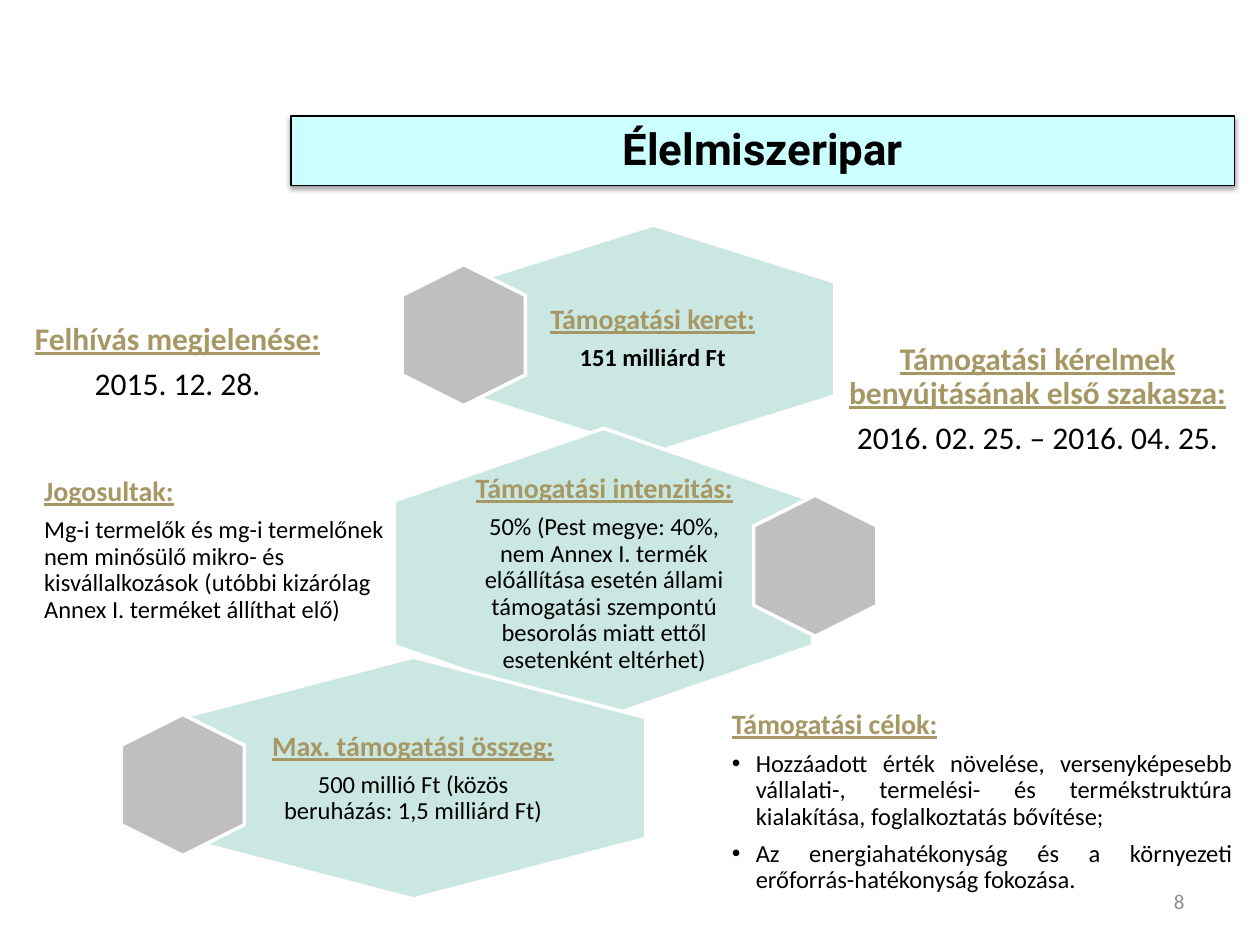
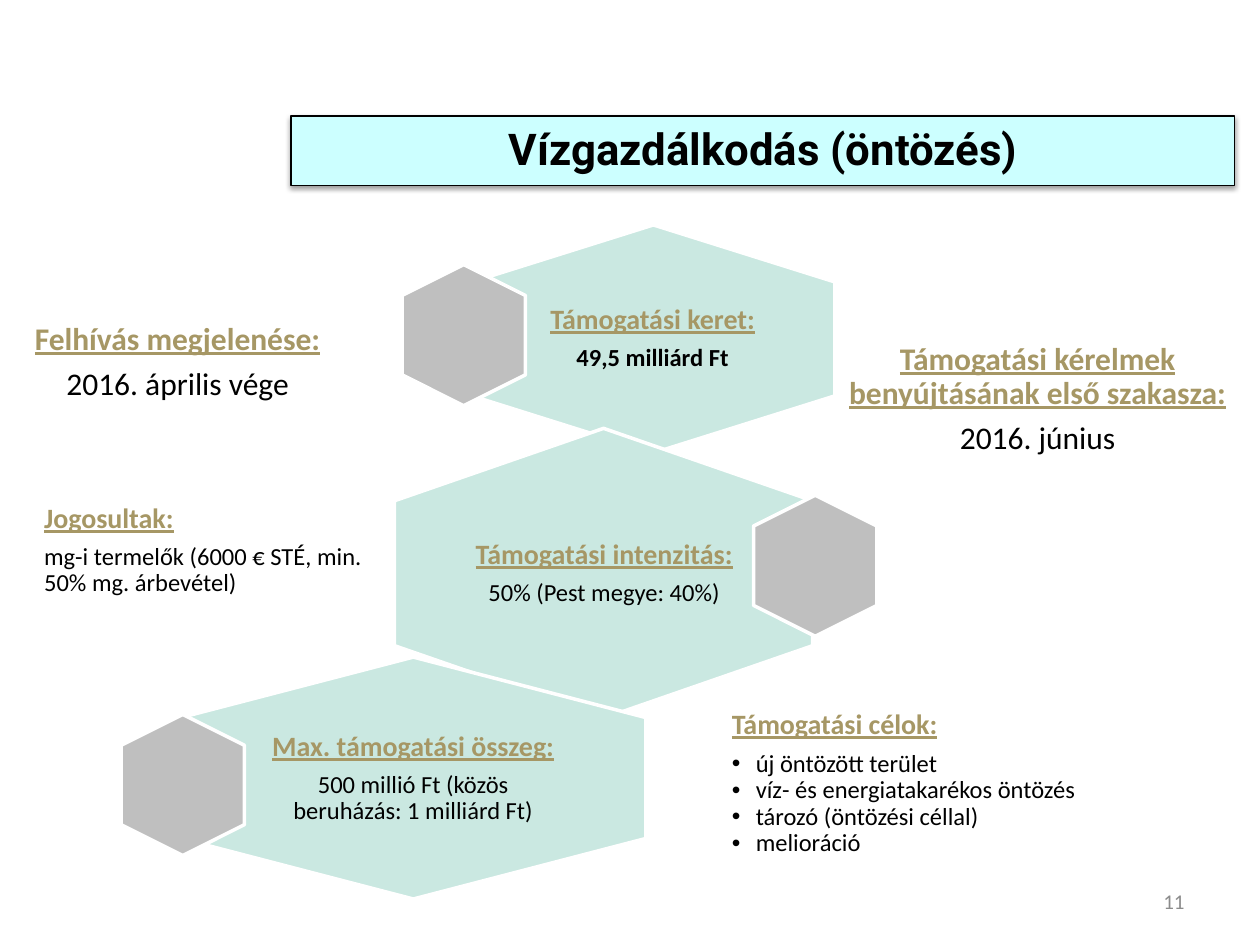
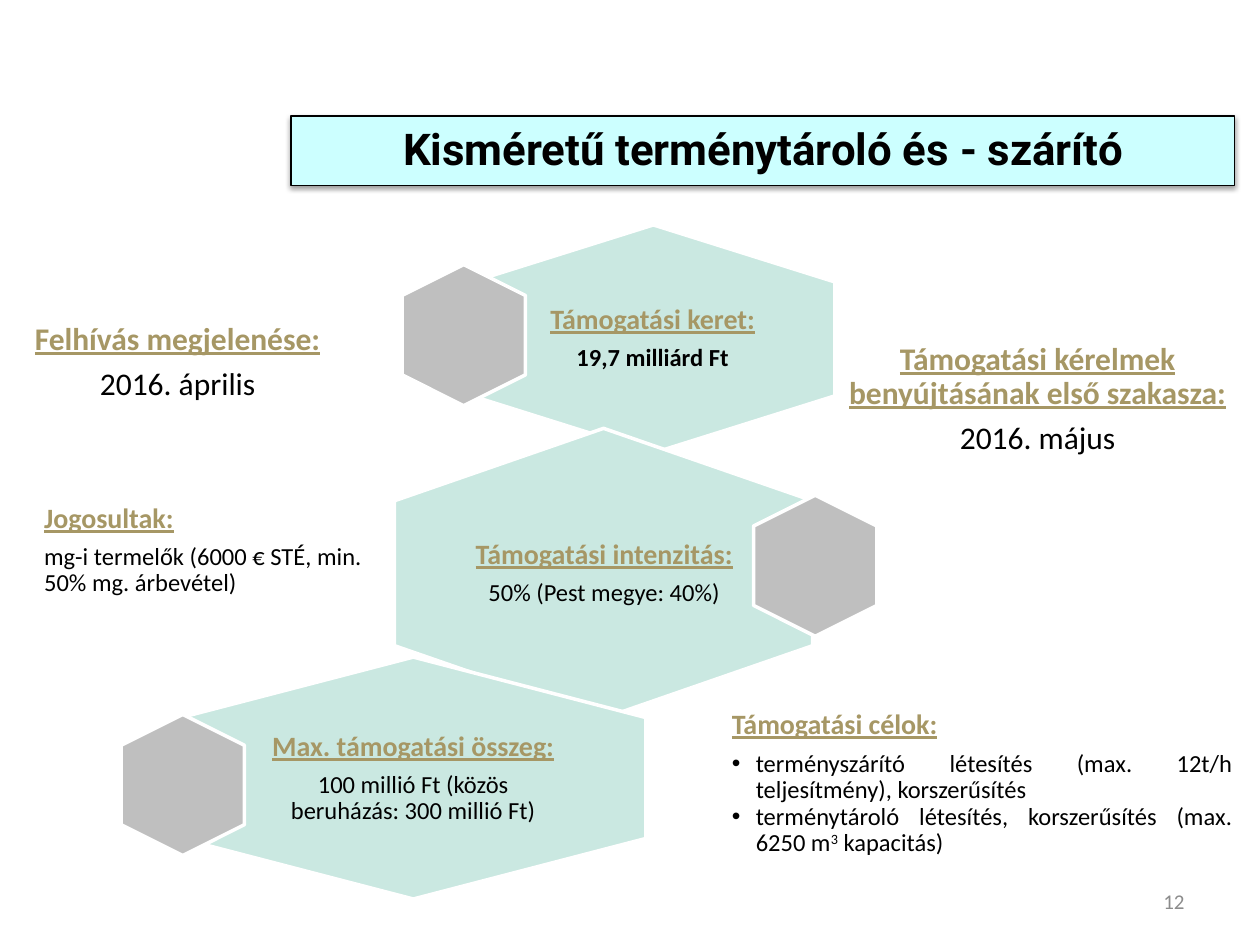
from lxml import etree
from pptx import Presentation
from pptx.dml.color import RGBColor
from pptx.enum.shapes import MSO_SHAPE
from pptx.enum.text import MSO_ANCHOR, PP_ALIGN
from pptx.oxml.ns import qn
from pptx.util import Inches, Pt

LEFT, CENTER, RIGHT, JUSTIFY = PP_ALIGN.LEFT, PP_ALIGN.CENTER, PP_ALIGN.RIGHT, PP_ALIGN.JUSTIFY
TOP, MIDDLE = MSO_ANCHOR.TOP, MSO_ANCHOR.MIDDLE
HEXAGON, RECTANGLE = MSO_SHAPE.HEXAGON, MSO_SHAPE.RECTANGLE

BODY_FONT, TITLE_FONT = "Calibri", "Roboto"
BLACK, WHITE, GOLD = "000000", "FFFFFF", "A69765"
MINT, GREY, CYAN, NUMBER_GREY = "CAE8E1", "BFBFBF", "CCFFFF", "8C8C8C"

# Content: one entry per call for applications
SMALL_FARMERS = "mg-i termelők (6000 € STÉ, min. 50% mg. árbevétel)"
CALLS = [
    {
        "number": "8",
        "title": "Élelmiszeripar",
        "budget": "151 milliárd Ft",
        "deadline": "2016. 02. 25. – 2016. 04. 25.",
        "intensity": "50% (Pest megye: 40%, nem Annex I. termék előállítása esetén állami "
                     "támogatási szempontú besorolás miatt ettől esetenként eltérhet)",
        "eligible": "Mg-i termelők és mg-i termelőnek nem minősülő mikro- és kisvállalkozások "
                    "(utóbbi kizárólag Annex I. terméket állíthat elő)",
        "maximum": "500 millió Ft (közös beruházás: 1,5 milliárd Ft)",
        "published": "2015. 12. 28.",
        "goals": [
            ["Hozzáadott érték növelése, versenyképesebb vállalati-, termelési- és "
             "termékstruktúra kialakítása, foglalkoztatás bővítése;"],
            ["Az energiahatékonyság és a környezeti erőforrás-hatékonyság fokozása."],
        ],
        "goal_gap": 6,
        "goals_height": 1.57,
    },
    {
        "number": "11",
        "title": "Vízgazdálkodás (öntözés)",
        "budget": "49,5 milliárd Ft",
        "deadline": "2016. június",
        "intensity": "50% (Pest megye: 40%)",
        "eligible": SMALL_FARMERS,
        "maximum": "500 millió Ft (közös beruházás: 1 milliárd Ft)",
        "published": "2016. április vége",
        "goals": [
            ["új öntözött terület"],
            ["víz- és energiatakarékos öntözés"],
            ["tározó (öntözési céllal)"],
            ["melioráció"],
        ],
        "goal_gap": 0,
        "goals_height": 1.28,
    },
    {
        "number": "12",
        "title": "Kisméretű terménytároló és - szárító",
        "budget": "19,7 milliárd Ft",
        "deadline": "2016. május",
        "intensity": "50% (Pest megye: 40%)",
        "eligible": SMALL_FARMERS,
        "maximum": "100 millió Ft (közös beruházás: 300 millió Ft)",
        "published": "2016. április",
        "goals": [
            ["terményszárító létesítés (max. 12t/h teljesítmény), korszerűsítés"],
            # The second run of a goal is superscript
            ["terménytároló létesítés, korszerűsítés (max. 6250 m", "3", " kapacitás)"],
        ],
        "goal_gap": 0,
        "goals_height": 1.28,
    },
]

# Label boxes: heading, box, heading size, text size, alignment
LABELS = {
    "budget": ("Támogatási keret:", (4.22, 2.09, 1.92, 1.2), 16, 14, CENTER),
    "deadline": ("Támogatási kérelmek benyújtásának első szakasza:",
                 (6.64, 2.67, 3.19, 1), 18, 18, CENTER),
    "intensity": ("Támogatási intenzitás:", (3.69, 3.79, 2.21, 1.53), 16, 14, CENTER),
    "eligible": ("Jogosultak:", (0.28, 3.52, 2.91, 1.7), 16, 14, LEFT),
    "maximum": ("Max. támogatási összeg:", (2.05, 5.54, 2.46, 1.28), 16, 14, CENTER),
    "published": ("Felhívás megjelenése:", (0.2, 2.41, 2.42, 0.94), 18, 18, CENTER),
}

# Rows from top to bottom: large hexagon, small hexagon corner, labels over the row
SMALL_SIZE = (1.12, 0.98)
ROWS = [
    ((4.28, 1.25, 1.81, 2.88), (3.12, 2.17), ("budget", "deadline")),
    ((3.64, 2.89, 2.3, 3.32), (5.91, 4), ("intensity", "eligible")),
    ((2.32, 4.33, 1.92, 3.69), (0.89, 5.74), ("maximum", "published")),
]
TITLE_BOX = (2.31, 0.92, 7.49, 0.55)
NUMBER_BOX = (7.17, 6.95, 2.33, 0.4)


def color(value):
    return RGBColor.from_string(value)


def add_box(slide, box, anchor=TOP, inset=None):
    frame = slide.shapes.add_textbox(*map(Inches, box)).text_frame
    frame.word_wrap = True
    frame.vertical_anchor = anchor
    if inset is not None:
        frame.margin_left = frame.margin_right = Inches(inset)
        frame.margin_top = frame.margin_bottom = Inches(inset)
    return frame


def add_run(paragraph, text, size, ink=BLACK, bold=False, underline=False, font=BODY_FONT):
    run = paragraph.add_run()
    run.text = text
    run.font.name = font
    run.font.size = Pt(size)
    run.font.color.rgb = color(ink)
    run.font.bold = bold
    run.font.underline = underline
    return run


def add_heading(paragraph, text, size):
    add_run(paragraph, text, size, GOLD, bold=True, underline=True)


def set_spacing(paragraph, alignment, after):
    paragraph.alignment = alignment
    paragraph.line_spacing = 0.9
    paragraph.space_after = Pt(after)


def add_bullet(paragraph):
    properties = paragraph._p.get_or_add_pPr()
    properties.set("marL", str(Inches(0.19)))
    properties.set("indent", str(-Inches(0.19)))
    etree.SubElement(properties, qn("a:buFont"), typeface="Arial")
    etree.SubElement(properties, qn("a:buChar"), char="•")


def add_shadow(shape):
    effects = shape._element.spPr.find(qn("a:effectLst"))
    shadow = etree.SubElement(effects, qn("a:outerShdw"), blurRad=str(Pt(3.1)),
                              dist=str(Pt(1.6)), dir="5400000", rotWithShape="0")
    ink = etree.SubElement(shadow, qn("a:srgbClr"), val=BLACK)
    etree.SubElement(ink, qn("a:alpha"), val="38000")


def add_filled(slide, kind, box, fill, line, width):
    shape = slide.shapes.add_shape(kind, *map(Inches, box))
    shape.shadow.inherit = False
    shape.fill.solid()
    shape.fill.fore_color.rgb = color(fill)
    shape.line.color.rgb = color(line)
    shape.line.width = Pt(width)
    return shape


def add_hexagon(slide, box, fill):
    hexagon = add_filled(slide, HEXAGON, box, fill, WHITE, 2)
    hexagon.rotation = 90


def add_label(slide, name, text):
    heading, box, heading_size, text_size, alignment = LABELS[name]
    frame = add_box(slide, box, MIDDLE, 0.07)
    first = frame.paragraphs[0]
    set_spacing(first, alignment, 0.35 * heading_size)
    add_heading(first, heading, heading_size)
    second = frame.add_paragraph()
    set_spacing(second, alignment, 0.35 * text_size)
    add_run(second, text, text_size, bold=name == "budget")


def add_goals(slide, call):
    frame = add_box(slide, (5.71, 5.59, 4.17, call["goals_height"]))
    heading = frame.paragraphs[0]
    set_spacing(heading, JUSTIFY, 6)
    add_heading(heading, "Támogatási célok:", 16)
    for goal in call["goals"]:
        paragraph = frame.add_paragraph()
        add_bullet(paragraph)
        is_last = goal is call["goals"][-1]
        set_spacing(paragraph, JUSTIFY, 0 if is_last else call["goal_gap"])
        for index, text in enumerate(goal):
            run = add_run(paragraph, text, 14)
            if index == 1:
                run._r.get_or_add_rPr().set("baseline", "30000")


def add_title(slide, text):
    band = add_filled(slide, RECTANGLE, TITLE_BOX, CYAN, BLACK, 0.75)
    add_shadow(band)
    band.text_frame.vertical_anchor = TOP
    paragraph = band.text_frame.paragraphs[0]
    paragraph.alignment = CENTER
    add_run(paragraph, text, 25, bold=True, font=TITLE_FONT)


def add_number(slide, text):
    paragraph = add_box(slide, NUMBER_BOX, MIDDLE).paragraphs[0]
    paragraph.alignment = RIGHT
    add_run(paragraph, text, 12, NUMBER_GREY)


def build_slide(presentation, call):
    slide = presentation.slides.add_slide(presentation.slide_layouts[6])
    add_number(slide, call["number"])
    for large_box, small_corner, names in ROWS:
        add_hexagon(slide, large_box, MINT)
        for name in names:
            add_label(slide, name, call[name])
        add_hexagon(slide, small_corner + SMALL_SIZE, GREY)
    add_goals(slide, call)
    add_title(slide, call["title"])


def main():
    presentation = Presentation()
    presentation.slide_width = Inches(10)
    presentation.slide_height = Inches(7.5)
    for call in CALLS:
        build_slide(presentation, call)
    presentation.save("out.pptx")


if __name__ == "__main__":
    main()
